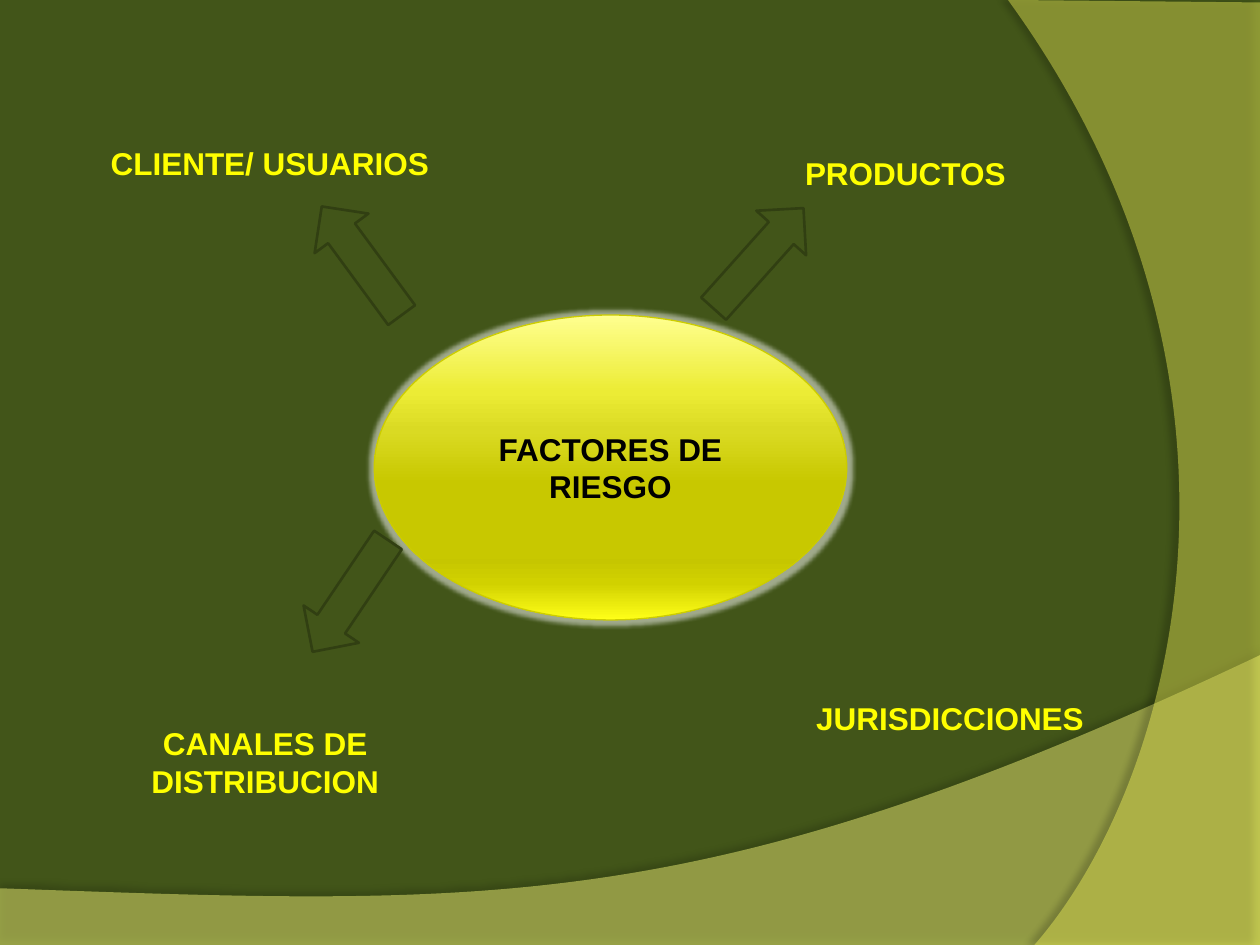
from lxml import etree
from pptx import Presentation
from pptx.dml.color import RGBColor
from pptx.enum.shapes import MSO_SHAPE
from pptx.enum.text import MSO_ANCHOR, PP_ALIGN
from pptx.oxml.ns import qn
from pptx.util import Emu, Inches, Pt

LEFT, CENTER = PP_ALIGN.LEFT, PP_ALIGN.CENTER
MIDDLE = MSO_ANCHOR.MIDDLE
OVAL, DOWN_ARROW = MSO_SHAPE.OVAL, MSO_SHAPE.DOWN_ARROW

GREEN = RGBColor(0x42, 0x55, 0x19)
DARK_GREEN = RGBColor(0x31, 0x3F, 0x12)
YELLOW = RGBColor(0xFF, 0xFF, 0x00)
GOLD = RGBColor(0xCC, 0xCC, 0x00)
BLACK = RGBColor(0x00, 0x00, 0x00)
WHITE = RGBColor(0xFF, 0xFF, 0xFF)
PALE_YELLOW = RGBColor(0xFF, 0xFF, 0x7F)
LEMON = RGBColor(0xFF, 0xFF, 0x5E)

WIDTH, HEIGHT = 10, 7.5
LABEL_HEIGHT = 0.4
ARROW_WIDTH, ARROW_LENGTH = 0.53, 1.07

# Content: label, left, top, width, alignment
FACTORS = [
    ("CLIENTE/ USUARIOS", 0.78, 1.09, 3.2, LEFT),
    ("PRODUCTOS", 6.09, 1.17, 2.19, CENTER),
    ("CANALES DE DISTRIBUCION", 0.7, 5.7, 2.81, CENTER),
    ("JURISDICCIONES", 6.33, 5.5, 2.42, CENTER),
]
HUB = ("FACTORES DE RIESGO", 2.97, 2.5, 3.75, 2.42)
HUB_GRADIENT = [(0, "FFFF90"), (25, "ECEC35"), (38, "DADA23"), (55, "C8C800"),
                (80, "C6C600"), (88, "D1D100"), (100, "FFFF18")]
# Arrows: centre x, centre y, rotation
ARROWS = [(2.87, 2.07, 143.7), (6.02, 2.05, 221.8), (2.78, 4.73, 34)]

# Background waves: corners, control points of the last edge,
# colour, opacity, shadow opacity, distance, direction
WAVES = [
    ([(0, 7.05), (0, HEIGHT), (WIDTH, HEIGHT), (WIDTH, 5.2), (0, 7.05)],
     [(5.59, 7.29), (3.91, 7.19)], PALE_YELLOW, 45, 35, 3.5, 270),
    ([(WIDTH, 0.02), (WIDTH, HEIGHT), (8.21, HEIGHT), (8, 0)],
     [(9.35, 6.19), (10.18, 3)], LEMON, 40, 45, 4, 180),
]


def add_color(parent, color, opacity):
    node = etree.SubElement(parent, qn("a:srgbClr"), val=str(color))
    etree.SubElement(node, qn("a:alpha"), val=str(opacity * 1000))


def add_effect(shape, tag, color, opacity, **attributes):
    effects = shape.element.spPr.find(qn("a:effectLst"))
    effect = etree.SubElement(effects, qn(tag), {k: str(v) for k, v in attributes.items()})
    add_color(effect, color, opacity)


def paint(shape, color, line=None, line_width=0):
    shape.shadow.inherit = False
    shape.fill.solid()
    shape.fill.fore_color.rgb = color
    if line is None:
        shape.line.fill.background()
    else:
        shape.line.color.rgb = line
        shape.line.width = Pt(line_width)


def write(shape, text, color, alignment):
    shape.text_frame.word_wrap = True
    paragraph = shape.text_frame.paragraphs[0]
    paragraph.text = text
    paragraph.alignment = alignment
    font = paragraph.font
    font.name, font.size, font.bold = "Arial", Pt(18), True
    font.color.rgb = color


def curve_last_edge(shape, controls):
    edge = shape.element.spPr.findall(".//" + qn("a:lnTo"))[-1]
    curve = etree.Element(qn("a:cubicBezTo"))
    for x, y in controls:
        etree.SubElement(curve, qn("a:pt"), x=str(Inches(x) - shape.left),
                         y=str(Inches(y) - shape.top))
    curve.append(edge[0])
    edge.getparent().replace(edge, curve)


def add_wave(slide, corners, controls, color, opacity,
             shadow_opacity, distance, direction):
    start, *others = [(Inches(x), Inches(y)) for x, y in corners]
    builder = slide.shapes.build_freeform(*start)
    builder.add_line_segments(others, close=True)
    wave = builder.convert_to_shape()
    curve_last_edge(wave, controls)
    paint(wave, color)
    solid = wave.element.spPr.find(qn("a:solidFill"))
    solid.clear()
    add_color(solid, color, opacity)
    add_effect(wave, "a:outerShdw", BLACK, shadow_opacity, blurRad=Pt(4),
               dist=Pt(distance), dir=direction * 60000)


def add_hub(slide, text, *box):
    hub = slide.shapes.add_shape(OVAL, *map(Inches, box))
    paint(hub, GOLD, GOLD, 0.75)
    hub.fill.gradient()
    hub.fill.gradient_angle = 270
    stops = hub.element.spPr.find(".//" + qn("a:gsLst"))
    stops.clear()
    for position, color in HUB_GRADIENT:
        stop = etree.SubElement(stops, qn("a:gs"), pos=str(position * 1000))
        etree.SubElement(stop, qn("a:srgbClr"), val=color)
    add_effect(hub, "a:glow", WHITE, 50, rad=Pt(5))
    hub.text_frame.vertical_anchor = MIDDLE
    write(hub, text, BLACK, CENTER)


def main():
    prs = Presentation()
    prs.slide_width, prs.slide_height = Inches(WIDTH), Inches(HEIGHT)
    slide = prs.slides.add_slide(prs.slide_layouts[6])
    slide.background.fill.solid()
    slide.background.fill.fore_color.rgb = GREEN

    for wave in WAVES:
        add_wave(slide, *wave)

    # Risk factors around the hub
    for text, left, top, width, alignment in FACTORS:
        label = slide.shapes.add_textbox(*map(Inches, (left, top, width, LABEL_HEIGHT)))
        write(label, text, YELLOW, alignment)
    add_hub(slide, *HUB)

    # Arrows from the hub outwards
    arrow_width, arrow_length = Inches(ARROW_WIDTH), Inches(ARROW_LENGTH)
    for x, y, rotation in ARROWS:
        arrow = slide.shapes.add_shape(
            DOWN_ARROW, Emu(Inches(x) - arrow_width // 2),
            Emu(Inches(y) - arrow_length // 2), arrow_width, arrow_length)
        arrow.rotation = rotation
        paint(arrow, GREEN, DARK_GREEN, 1.5)

    prs.save("out.pptx")


if __name__ == "__main__":
    main()
